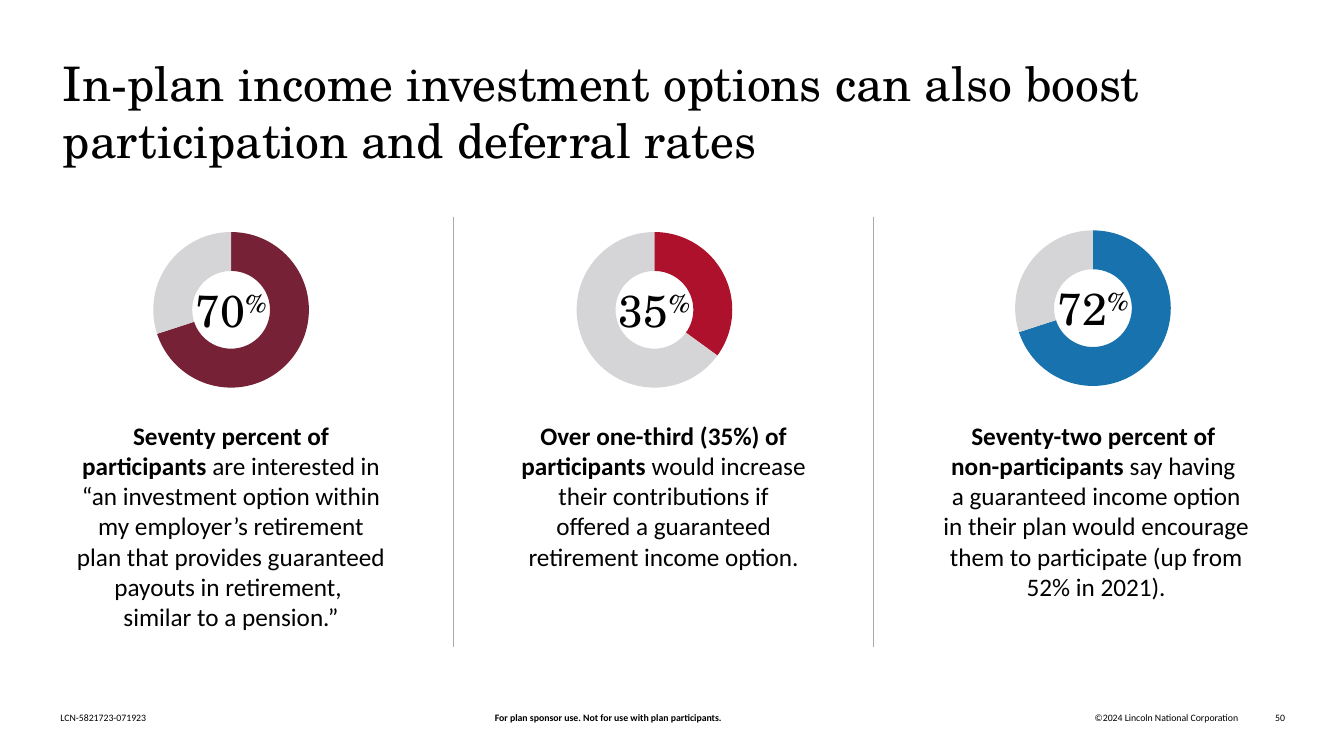
from lxml.etree import SubElement
from pptx import Presentation
from pptx.chart.data import CategoryChartData
from pptx.dml.color import RGBColor
from pptx.enum.chart import XL_CHART_TYPE
from pptx.enum.shapes import MSO_CONNECTOR
from pptx.enum.text import MSO_ANCHOR, MSO_AUTO_SIZE, PP_ALIGN
from pptx.oxml import parse_xml
from pptx.oxml.ns import nsdecls, qn
from pptx.util import Inches, Pt

COLS, ROWS = 160, 90
SANS, SERIF = "Calibri", "TeX Gyre Schola"
LEFT, MID, RIGHT = PP_ALIGN.LEFT, PP_ALIGN.CENTER, PP_ALIGN.RIGHT


def color(code):
    return RGBColor.from_string(code)


def style(target, values):
    for name, value in values.items():
        setattr(target, name, value)


class Deck:
    """Holds the fonts, the grid and the current slide; boxes are in columns and rows."""

    body = {"name": SANS, "size": Pt(18)}
    small = {"name": SANS, "size": Pt(7)}
    head = {"name": SERIF, "size": Pt(34)}
    figure = {"name": SERIF, "size": Pt(32)}
    frame = {"margin_left": 0, "margin_right": 0, "margin_top": 0,
             "margin_bottom": 0, "word_wrap": True,
             "auto_size": MSO_AUTO_SIZE.NONE}
    ink, rest, rule = "000000", "D5D5D7", "AAAAAA"

    def __init__(self):
        self.file = Presentation()
        self.file.slide_width = Inches(13.33)
        self.file.slide_height = Inches(7.5)
        self.slide = self.file.slides.add_slide(self.file.slide_layouts[5])

    def place(self, x, y, w, h):
        col, row = self.file.slide_width / COLS, self.file.slide_height / ROWS
        return [round(v) for v in (x * col, y * row, w * col, h * row)]

    def fill_in(self, shape, runs, font, align, anchor=MSO_ANCHOR.TOP):
        """Fill a shape with (text, extra font values) runs; newlines break lines."""
        style(shape.text_frame, self.frame | {"vertical_anchor": anchor})
        para = shape.text_frame.paragraphs[0]
        para.alignment = align
        for text, extra in runs:
            for i, line in enumerate(text.split("\n")):
                if i:
                    para.add_line_break()
                run = para.add_run()
                run.text = line
                style(run.font, font | extra)
                run.font.color.rgb = color(self.ink)
        return para

    def title(self, text, box):
        shape = self.slide.shapes.title
        names = ("left", "top", "width", "height")
        style(shape, dict(zip(names, self.place(*box))))
        self.fill_in(shape, [(text, {})], self.head, LEFT)

    def text(self, runs, box, font, align=MID, anchor=MSO_ANCHOR.TOP):
        shape = self.slide.shapes.add_textbox(*self.place(*box))
        return self.fill_in(shape, runs, font, align, anchor)

    def line(self, x, top, end):
        x, top, _, end = self.place(x, top, 0, end)
        link = self.slide.shapes.add_connector(
            MSO_CONNECTOR.STRAIGHT, x, top, x, end)
        link.line.color.rgb = color(self.rule)
        link.line.width = Pt(1.25)
        SubElement(link._element.spPr, qn("a:effectLst"))

    def ring(self, share, fill, box):
        data = CategoryChartData()
        data.categories = ["1", "2"]
        data.add_series("Series 1", (share, 100 - share))
        chart = self.slide.shapes.add_chart(
            XL_CHART_TYPE.DOUGHNUT, *self.place(*box), data).chart
        style(chart, {"has_title": False, "has_legend": False})
        style(chart.font, {"name": SANS, "size": Pt(10)})
        chart.font.color.rgb = color(self.ink)
        plot = chart.plots[0]
        plot.vary_by_categories = False
        for i, code in enumerate((fill, self.rest)):
            part = plot.series[0].points[i].format
            part.fill.solid()
            part.fill.fore_color.rgb = color(code)
            part.line.fill.background()
        area = chart._chartSpace.chart.plotArea
        area.find(".//" + qn("c:holeSize")).set("val", "75")
        self.fit(area, box)

    def fit(self, area, box):
        """Center the ring, 85% of the chart's height, in its plot area."""
        tall = 0.85
        wide = tall * box[3] / box[2]
        for old in area.findall(qn("c:layout")):
            area.remove(old)
        values = {"x": (1 - wide) / 2, "y": (1 - tall) / 2, "w": wide, "h": tall}
        marks = "".join(f'<c:{k} val="{v:.3f}"/>' for k, v in values.items())
        area.insert(0, parse_xml(
            f'<c:layout {nsdecls("c")}><c:manualLayout>'
            '<c:layoutTarget val="inner"/><c:xMode val="edge"/>'
            f'<c:yMode val="edge"/>{marks}</c:manualLayout></c:layout>'))

    def stat(self, share, label, fill, x, y):
        """Draw a ring with its percentage in the middle."""
        self.ring(share, fill, (x, y, 29, 21.8))
        para = self.text([(label, {}), ("%", {})],
                         (x + 6, y + 7.6, 17, 6.5), self.figure)
        para.runs[1].font._element.set("baseline", "30000")


# ring share, label, colour, ring x, ring y, text x, text width, bold, plain
STATS = [
    (70, "70", "762135", 13, 26, 9, 37, "Seventy percent of participants ",
     "are interested in “an investment option within my employer’s retirement "
     "plan that provides guaranteed payouts in retirement, \n"
     "similar to a pension.”"),
    (35, "35", "AD112B", 63.4, 26, 62, 34, "Over one-third (35%) of participants ",
     "would increase their contributions if offered a guaranteed "
     "retirement income option."),
    (70, "72", "1772AE", 115.6, 25.8, 112, 37,
     "Seventy-two percent of \nnon-participants ",
     "say having \na guaranteed income option in their plan would encourage "
     "them to participate (up from 52% in 2021)."),
]
NOTES = [
    ("LCN-5821723-071923", 7.2, 22.4, LEFT, False),
    ("For plan sponsor use. Not for use with plan participants.",
     26.8, 91.2, MID, True),
    ("©2024 Lincoln National Corporation", 118, 29.4, RIGHT, False),
    ("50", 149, 4, RIGHT, False),
]


def main():
    deck = Deck()
    deck.title("In-plan income investment options can also boost "
               "participation and deferral rates", (7.5, 6.4, 144.8, 6.8))
    for share, label, fill, x, y, left, wide, bold, plain in STATS:
        deck.stat(share, label, fill, x, y)
        deck.text([(bold, {"bold": True}), (plain, {"bold": False})],
                  (left, 50, wide, 25.4), deck.body)
    for x in (54, 104):
        deck.line(x, 25.8, 77)
    for text, x, wide, align, bold in NOTES:
        deck.text([(text, {"bold": bold})], (x, 84.7, wide, 1.4),
                  deck.small, align, MSO_ANCHOR.BOTTOM)
    deck.file.save("out.pptx")


if __name__ == "__main__":
    main()
